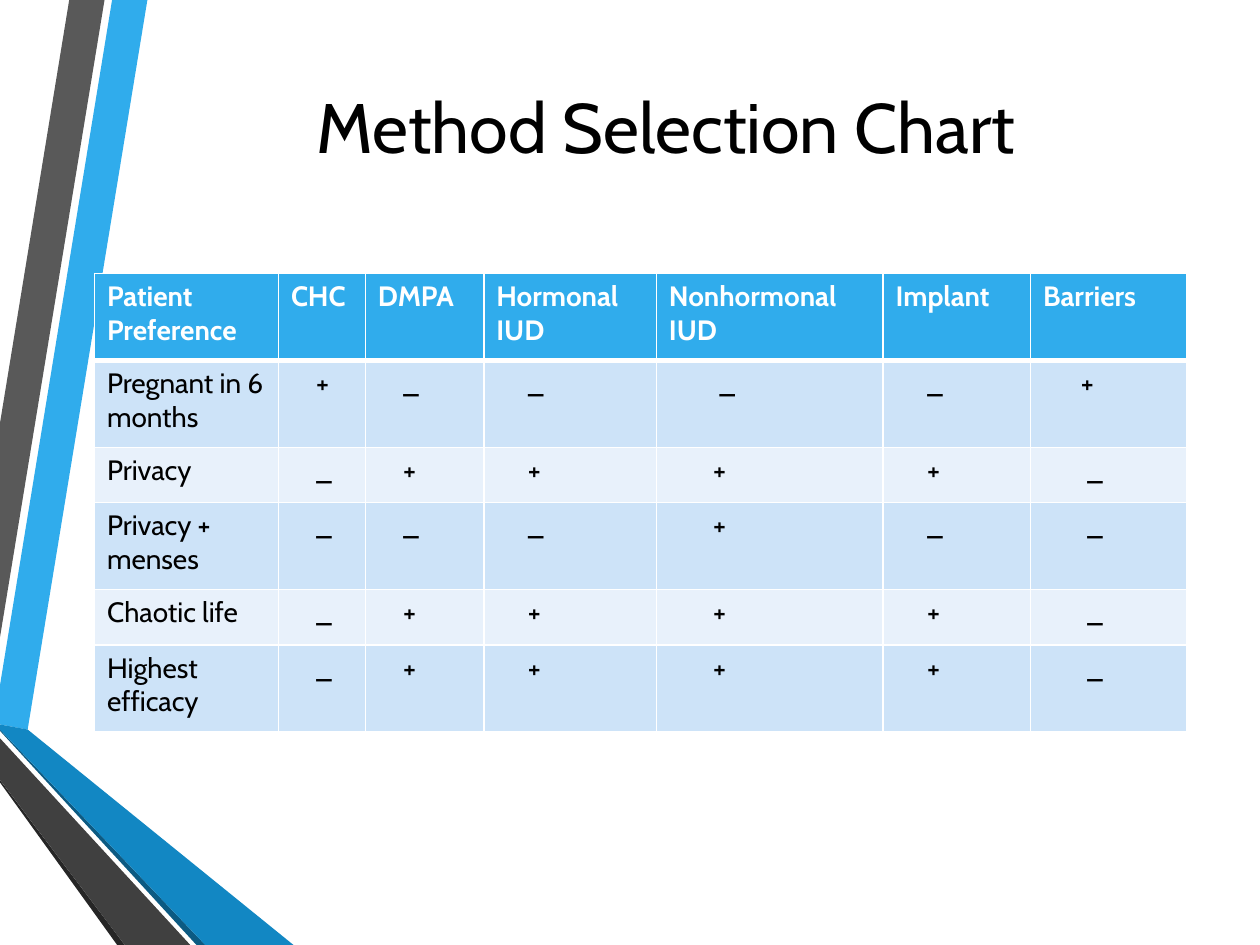
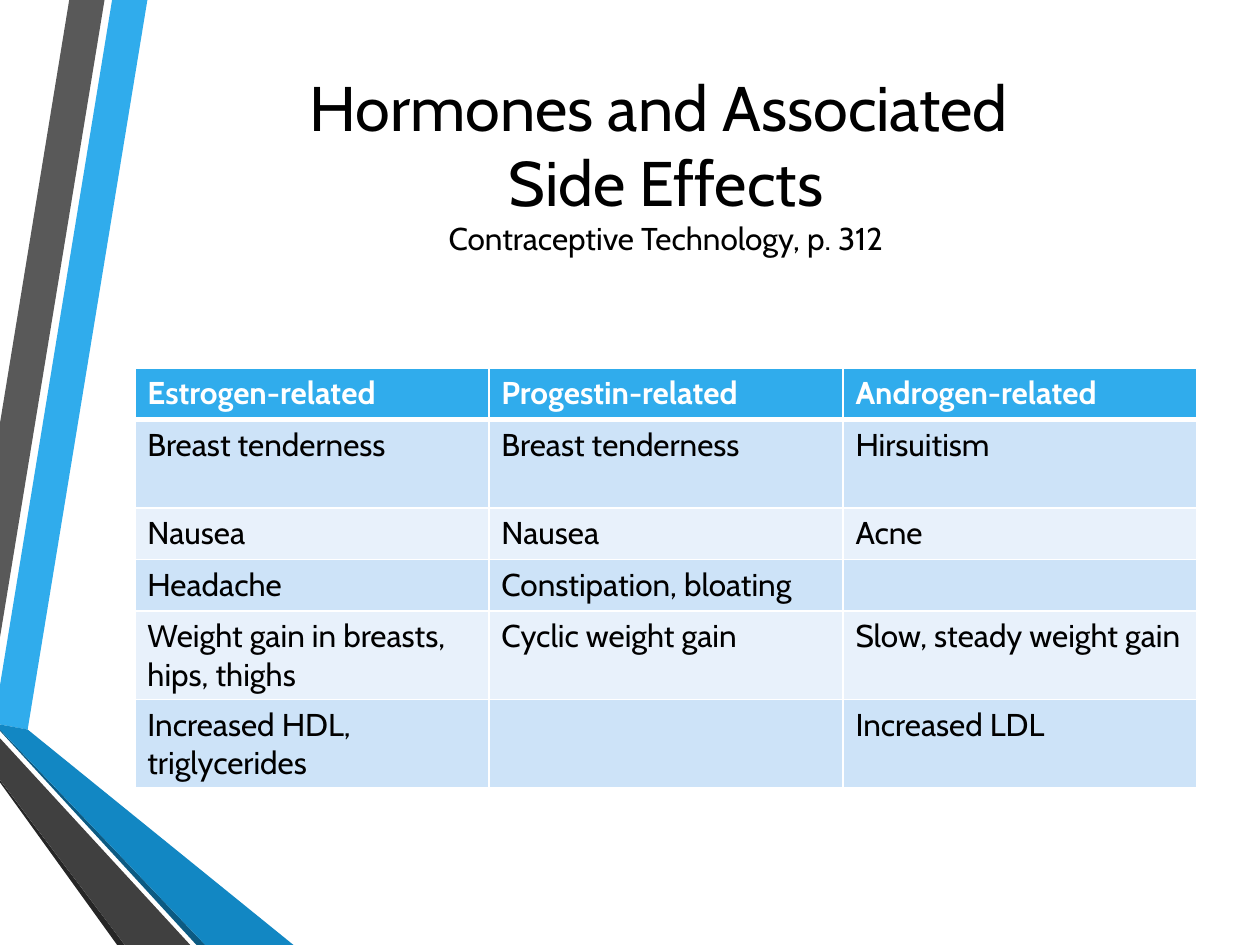
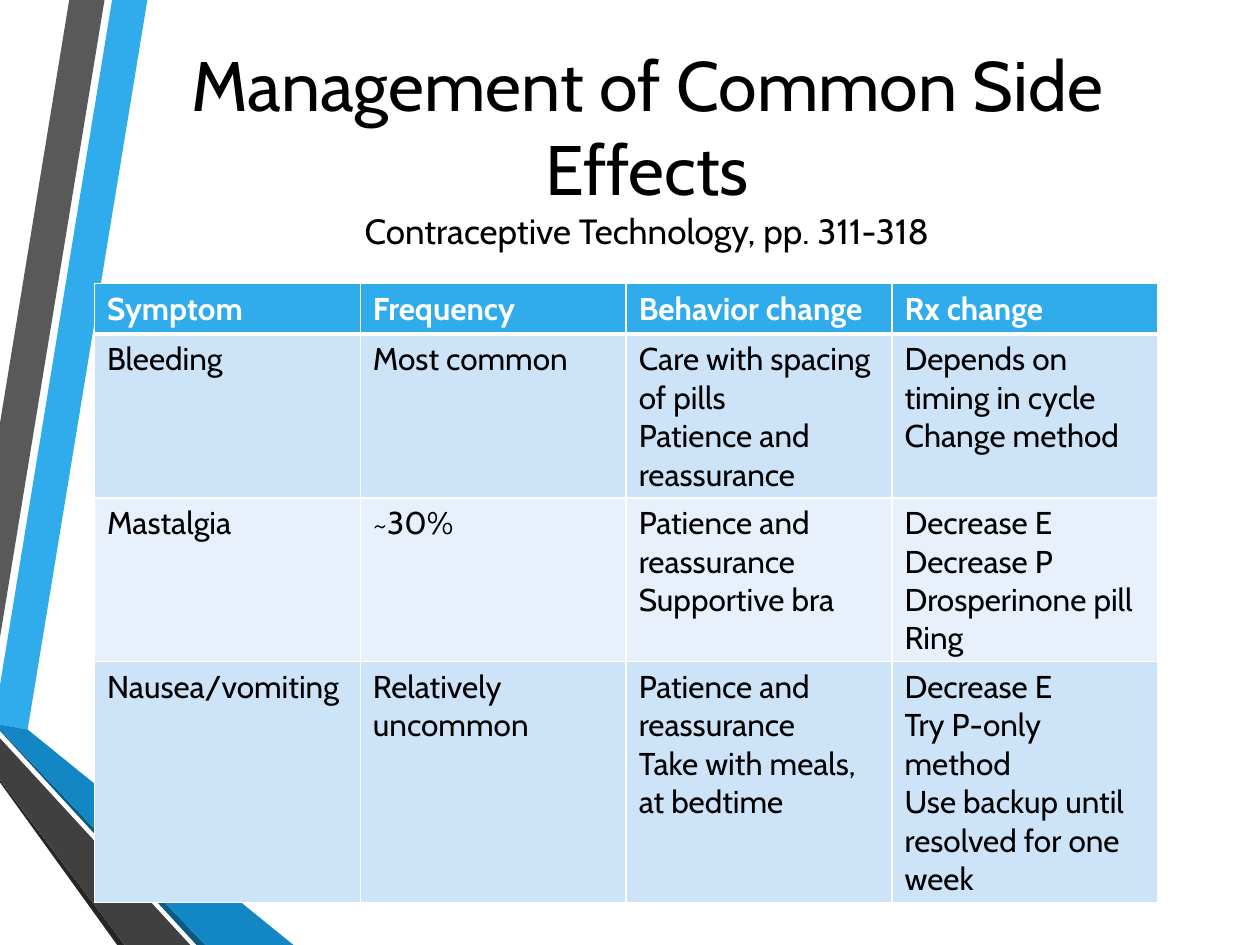
"""Build three contraception slides, each a title over a banded table."""
import dataclasses
import typing

import lxml.etree
import pptx
import pptx.dml.color
import pptx.enum.text
import pptx.oxml.ns
import pptx.util

Inches = pptx.util.Inches
RGBColor = pptx.dml.color.RGBColor

FONT = "Cabin"
BLACK = RGBColor(0x00, 0x00, 0x00)
WHITE = RGBColor(0xFF, 0xFF, 0xFF)
SKY = RGBColor(0x30, 0xAC, 0xEC)
OCEAN = RGBColor(0x12, 0x87, 0xC3)
DEEP_OCEAN = RGBColor(0x0C, 0x5A, 0x82)
GRAY = RGBColor(0x59, 0x59, 0x59)
CHARCOAL = RGBColor(0x40, 0x40, 0x40)
INK = RGBColor(0x26, 0x26, 0x26)
ROW_FILLS = (RGBColor(0xCD, 0xE3, 0xF8), RGBColor(0xE8, 0xF1, 0xFB))

RULE_WIDTH = 1
HEADER_RULE_WIDTH = 3
MARK_STEP = 0.05
MARK_STEPS = {"+": (4, 4, 5, 7, 5, 6), "_": (4, 4, 5, 8, 5, 7)}


@dataclasses.dataclass(frozen=True)
class Ribbon:
    """A coloured polygon with its corners in inches."""
    color: RGBColor
    corners: tuple[tuple[float, float], ...]


@dataclasses.dataclass(frozen=True)
class Title:
    """A centred heading with an optional smaller source line."""
    heading: str
    size: int
    box: tuple[float, float, float, float]
    source: str = ""


@dataclasses.dataclass(frozen=True)
class Grid:
    """A table whose first row is the header."""
    left: float
    top: float
    columns: tuple[float, ...]
    heights: tuple[float, ...]
    size: int
    rows: tuple[tuple[str, ...], ...]


@dataclasses.dataclass(frozen=True)
class Page:
    """One slide: its title and its table."""
    title: Title
    grid: Grid


RIBBONS = (
    Ribbon(SKY, ((0, 5.44), (0, 5.75), (0.22, 5.79), (1.17, 0), (0.89, 0))),
    Ribbon(GRAY, ((0.83, 0), (0.55, 0), (0, 3.36), (0, 5.06))),
    Ribbon(INK, ((0, 6.19), (0, 6.21), (0.93, 7.5), (0.99, 7.5))),
    Ribbon(DEEP_OCEAN, ((0, 5.79), (0, 5.8), (1.56, 7.5), (1.63, 7.5))),
    Ribbon(OCEAN, ((0, 5.79), (1.63, 7.5), (2.33, 7.5), (0.22, 5.79), (0, 5.75))),
    Ribbon(CHARCOAL, ((0, 6.19), (0.99, 7.5), (1.51, 7.5), (0, 5.86))),
)

PAGES = (
    Page(
        Title("Method Selection Chart", 40, (1.07, 0.5, 8.43, 1)),
        Grid(0.75, 2.17, (1.46, 0.69, 0.94, 1.37, 1.8, 1.17, 1.24),
             (0.69, 0.69, 0.44, 0.69, 0.44, 0.69), 16, (
            ("Patient Preference", "CHC", "DMPA", "Hormonal\nIUD",
             "Nonhormonal IUD", "Implant", "Barriers"),
            ("Pregnant in 6 months", *"+____+"),
            ("Privacy", *"_++++_"),
            ("Privacy + menses", *"___+__"),
            ("Chaotic life", *"_++++_"),
            ("Highest efficacy", *"_++++_"),
        )),
    ),
    Page(
        Title("Hormones and Associated \vSide Effects", 36, (1.07, 0.5, 8.43, 1.58),
              "Contraceptive Technology, p. 312"),
        Grid(1.07, 2.92, (2.81,) * 3, (0.41, 0.7, 0.41, 0.41, 0.7, 0.7), 18, (
            ("Estrogen-related", "Progestin-related", "Androgen-related"),
            ("Breast tenderness", "Breast tenderness", "Hirsuitism"),
            ("Nausea", "Nausea", "Acne"),
            ("Headache", "Constipation, bloating", ""),
            ("Weight gain in breasts, hips, thighs", "Cyclic weight gain",
             "Slow, steady weight gain"),
            ("Increased HDL, triglycerides", "", "Increased LDL"),
        )),
    ),
    Page(
        Title("Management of Common Side Effects", 40, (0.92, 0.08, 8.43, 2.17),
              "Contraceptive Technology, pp. 311-318"),
        Grid(0.75, 2.25, (2.11,) * 4, (0.4, 1.3, 1.3, 1.91), 18, (
            ("Symptom", "Frequency", "Behavior change", "Rx change"),
            ("Bleeding", "Most common",
             "Care with spacing of pills\nPatience and reassurance",
             "Depends on timing in cycle\nChange method"),
            ("Mastalgia", "~30%", "Patience and reassurance\nSupportive bra",
             "Decrease E\nDecrease P\nDrosperinone pill\nRing"),
            ("Nausea/vomiting", "Relatively uncommon",
             "Patience and reassurance\nTake with meals, at bedtime",
             "Decrease E\nTry P-only method\nUse backup until resolved for one week"),
        )),
    ),
)


def style_run(run: typing.Any, size: int, color: RGBColor, bold: bool = False) -> None:
    """Give a run the deck font."""
    run.font.name = FONT
    run.font.size = pptx.util.Pt(size)
    run.font.bold = bold
    run.font.color.rgb = color


def draw_ribbon(slide: typing.Any, ribbon: Ribbon) -> None:
    """Draw one ribbon of the left edge."""
    start, *others = [(Inches(x), Inches(y)) for x, y in ribbon.corners]
    builder = slide.shapes.build_freeform(*start)
    builder.add_line_segments(others, close=True)
    outline = builder.convert_to_shape()
    outline.shadow.inherit = False
    outline.fill.solid()
    outline.fill.fore_color.rgb = ribbon.color
    outline.line.fill.background()


def draw_title(slide: typing.Any, title: Title) -> None:
    """Write the heading and its source line."""
    frame = slide.shapes.add_textbox(*map(Inches, title.box)).text_frame
    frame.word_wrap = True
    frame.vertical_anchor = pptx.enum.text.MSO_ANCHOR.MIDDLE
    frame.text = f"{title.heading}\v{title.source}" if title.source else title.heading
    paragraph = frame.paragraphs[0]
    paragraph.alignment = pptx.enum.text.PP_ALIGN.CENTER
    for run in paragraph.runs:
        style_run(run, title.size // 2 if run.text == title.source else title.size, BLACK)


def rule_cell(cell: typing.Any, top: int, bottom: int) -> None:
    """Put white rules on the four sides of a cell."""
    properties = cell._tc.get_or_add_tcPr()
    widths = {"lnL": RULE_WIDTH, "lnR": RULE_WIDTH, "lnT": top, "lnB": bottom}
    for position, (side, width) in enumerate(widths.items()):
        rule = lxml.etree.Element(pptx.oxml.ns.qn(f"a:{side}"), w=str(pptx.util.Pt(width)))
        fill = lxml.etree.SubElement(rule, pptx.oxml.ns.qn("a:solidFill"))
        lxml.etree.SubElement(fill, pptx.oxml.ns.qn("a:srgbClr"), val=str(WHITE))
        properties.insert(position, rule)


def fill_cell(cell: typing.Any, text: str, row: int, column: int, size: int) -> None:
    """Write and colour one cell, indenting plus and minus marks."""
    is_header = row == 0
    cell.text_frame.text = text
    for paragraph in cell.text_frame.paragraphs:
        if text in MARK_STEPS:
            indent = Inches(MARK_STEP * MARK_STEPS[text][column - 1])
            paragraph._p.get_or_add_pPr().set("marL", str(indent))
        for run in paragraph.runs:
            style_run(run, size, WHITE if is_header else BLACK, is_header)
    cell.fill.solid()
    cell.fill.fore_color.rgb = SKY if is_header else ROW_FILLS[(row - 1) % 2]
    rule_cell(cell, HEADER_RULE_WIDTH if row == 1 else RULE_WIDTH,
              HEADER_RULE_WIDTH if is_header else RULE_WIDTH)


def draw_grid(slide: typing.Any, grid: Grid) -> None:
    """Draw the table."""
    table = slide.shapes.add_table(
        len(grid.rows), len(grid.columns), Inches(grid.left), Inches(grid.top),
        Inches(sum(grid.columns)), Inches(sum(grid.heights))).table
    table.horz_banding = False
    for column, width in zip(table.columns, grid.columns):
        column.width = Inches(width)
    for row, height in zip(table.rows, grid.heights):
        row.height = Inches(height)
    for row_index, texts in enumerate(grid.rows):
        for column_index, text in enumerate(texts):
            fill_cell(table.cell(row_index, column_index), text,
                      row_index, column_index, grid.size)


def main() -> None:
    """Build and save the deck."""
    deck = pptx.Presentation()
    deck.slide_width, deck.slide_height = Inches(10), Inches(7.5)
    for page in PAGES:
        slide = deck.slides.add_slide(deck.slide_layouts[6])
        for ribbon in RIBBONS:
            draw_ribbon(slide, ribbon)
        draw_title(slide, page.title)
        draw_grid(slide, page.grid)
    deck.save("out.pptx")


if __name__ == "__main__":
    main()
